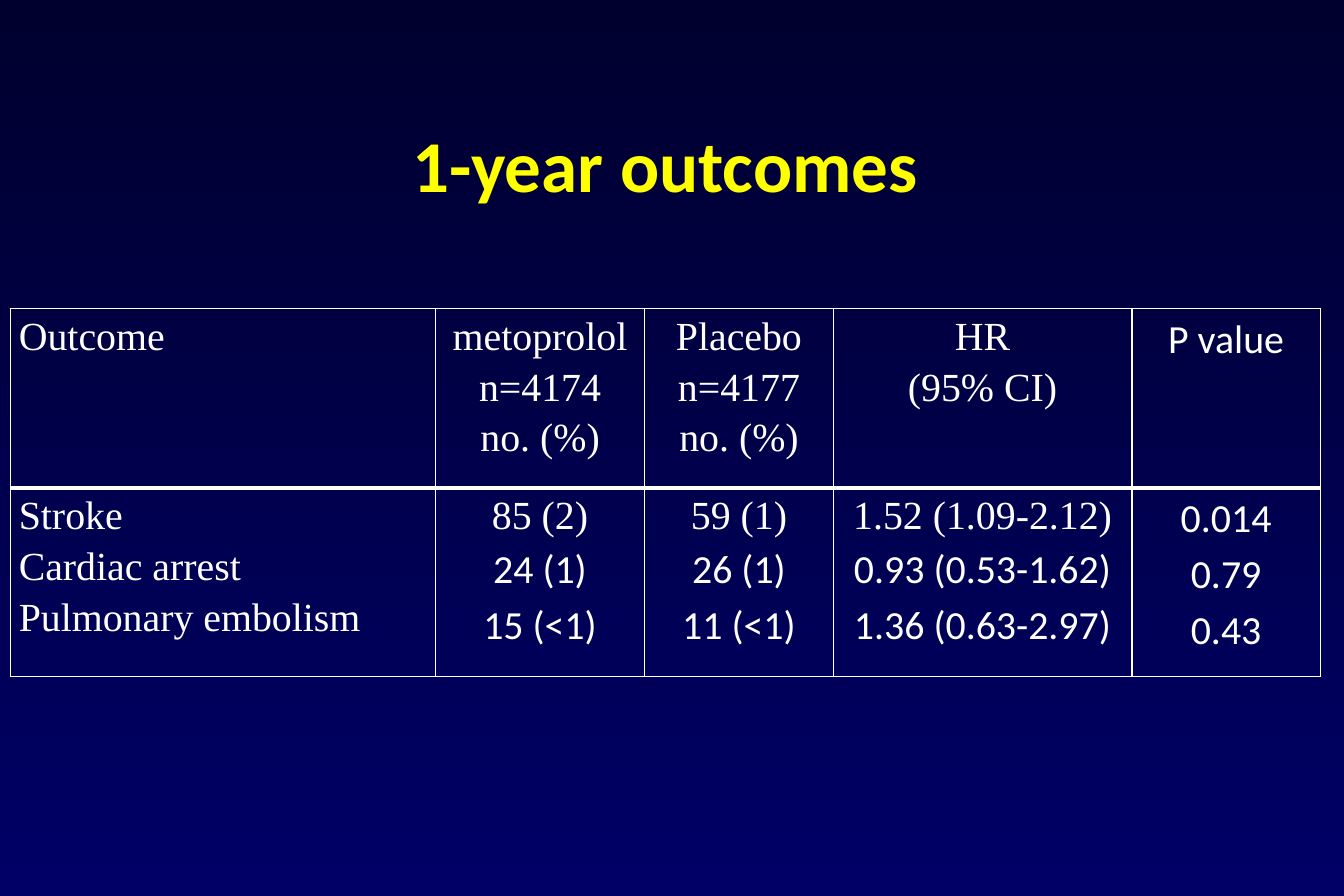
import pptx
import pptx.util
import pptx.dml.color
import pptx.enum.text
import pptx.oxml
import pptx.oxml.ns

Cm = pptx.util.Cm
Pt = pptx.util.Pt
ALIGN = pptx.enum.text.PP_ALIGN
ANCHOR = pptx.enum.text.MSO_ANCHOR

SERIF, SANS = "Times New Roman", "Calibri"
WHITE = "FFFFFF"
COL_WIDTHS = [9.04, 4.45, 4.01, 6.35, 4.01]
ROW_HEIGHTS = [3.81, 4.01]
P_VALUE_COL = 4
OUTCOMES = [
    ["Outcome", "metoprolol\nn=4174\nno. (%)", "Placebo\nn=4177\nno. (%)",
     "HR\n(95% CI)", "P value"],
    ["Stroke\nCardiac arrest\nPulmonary embolism",
     "85 (2)\n24 (1)\n15 (<1)",
     "59 (1)\n26 (1)\n11 (<1)",
     "1.52 (1.09-2.12)\n0.93 (0.53-1.62)\n1.36 (0.63-2.97)",
     "0.014\n0.79\n0.43"],
]


def rgb(color):
    return pptx.dml.color.RGBColor.from_string(color)


def format_run(r, font, size, color, bold=False):
    r.font.name = font
    r.font.size = Pt(size)
    r.font.color.rgb = rgb(color)
    r.font.bold = bold


def set_background(s):
    fill = s.background.fill
    fill.gradient()
    fill.gradient_angle = 270
    for stop, color in zip(fill.gradient_stops, ["00002F", "000066"]):
        stop.color.rgb = rgb(color)


def set_borders(cell, widths):
    tcPr = cell._tc.get_or_add_tcPr()
    for i, (side, width) in enumerate(zip("LRTB", widths)):
        ln = pptx.oxml.parse_xml(
            f'<a:ln{side} {pptx.oxml.ns.nsdecls("a")} w="{Pt(width)}">'
            f'<a:solidFill><a:srgbClr val="{WHITE}"/></a:solidFill>'
            f'</a:ln{side}>')
        tcPr.insert(i, ln)


def line_font(row, col, line):
    if col == 0:
        return SERIF
    if col == P_VALUE_COL:
        return SANS
    return SERIF if row == 0 or line == 0 else SANS


def fill_cell(cell, text, row, col):
    cell.fill.background()
    cell.margin_left = cell.margin_right = Cm(0.18)
    cell.margin_top = cell.margin_bottom = 0
    cell.vertical_anchor = ANCHOR.TOP
    set_borders(cell, [1, 1, 3, 1] if row else [1, 1, 1, 3])
    cell.text_frame.text = text
    for line, p in enumerate(cell.text_frame.paragraphs):
        p.alignment = ALIGN.CENTER if col else ALIGN.LEFT
        p.line_spacing = 1.15
        format_run(p.runs[0], line_font(row, col, line), 24, WHITE)


def add_title(s, left, top, width, height):
    sp = s.shapes.title
    sp.left, sp.top, sp.width, sp.height = Cm(left), Cm(top), Cm(width), Cm(height)
    tf = sp.text_frame
    tf.text = "1-year outcomes"
    tf.vertical_anchor = ANCHOR.MIDDLE
    p = tf.paragraphs[0]
    p.alignment = ALIGN.CENTER
    format_run(p.runs[0], SANS, 44, "FFFF00", bold=True)


def add_outcome_table(s, left, top, width, height):
    table = s.shapes.add_table(len(ROW_HEIGHTS), len(COL_WIDTHS),
                               Cm(left), Cm(top), Cm(width), Cm(height)).table
    table.first_row = False
    table.horz_banding = False
    for column, share in zip(table.columns, COL_WIDTHS):
        column.width = Cm(width * share / sum(COL_WIDTHS))
    for row, share in zip(table.rows, ROW_HEIGHTS):
        row.height = Cm(height * share / sum(ROW_HEIGHTS))
    for row, texts in enumerate(OUTCOMES):
        for col, text in enumerate(texts):
            fill_cell(table.cell(row, col), text, row, col)


def main():
    prs = pptx.Presentation()
    prs.slide_width, prs.slide_height = Cm(28.58), Cm(19.05)
    s = prs.slides.add_slide(prs.slide_layouts[5])
    set_background(s)
    add_title(s, 2.01, 2.11, 24.28, 2.74)
    add_outcome_table(s, 0.22, 6.56, 27.86, 7.82)
    prs.save("out.pptx")


if __name__ == "__main__":
    main()
